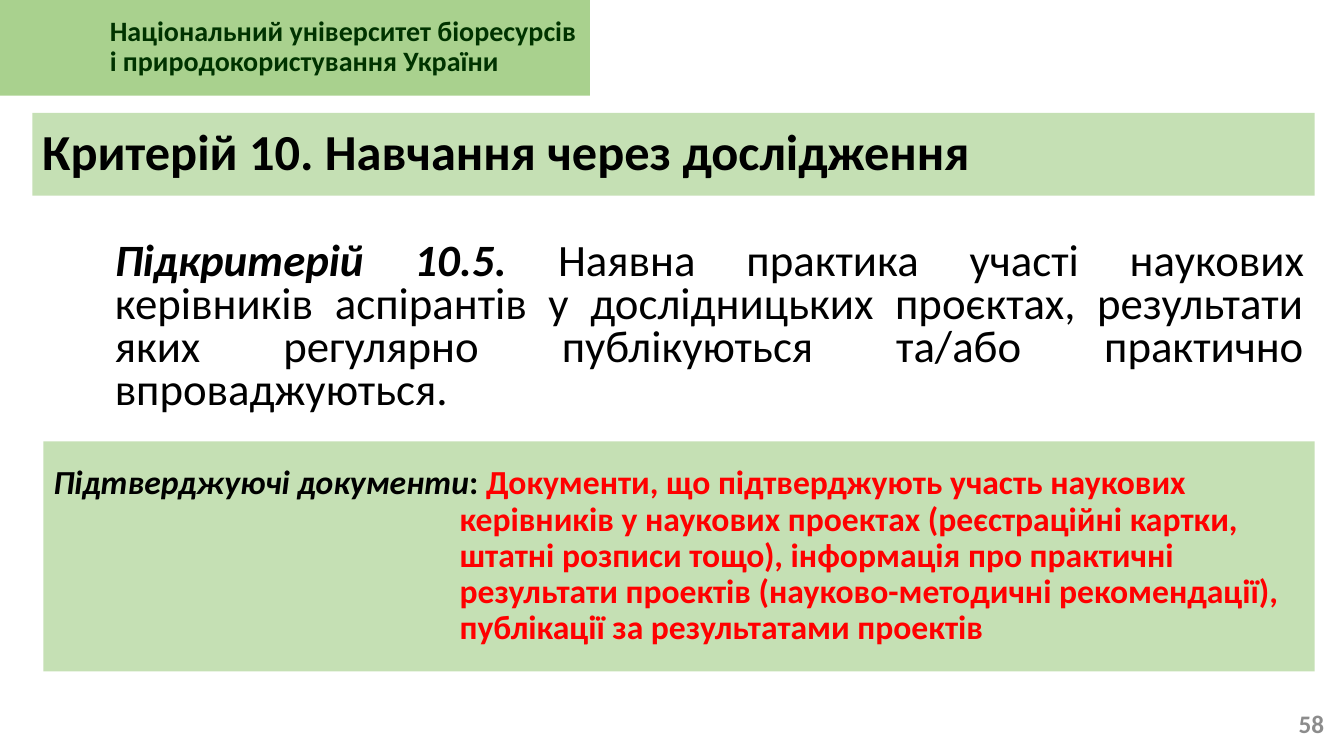
from dataclasses import dataclass
from typing import Optional

import pptx
import pptx.dml.color
import pptx.enum.shapes
import pptx.enum.text
import pptx.presentation
import pptx.slide
import pptx.util

RGBColor = pptx.dml.color.RGBColor
Inches = pptx.util.Inches
Align = pptx.enum.text.PP_ALIGN

MID_GREEN = RGBColor(0xA9, 0xD1, 0x8E)
PALE_GREEN = RGBColor(0xC5, 0xE0, 0xB4)
DARK_GREEN = RGBColor(0x00, 0x33, 0x00)
BLACK = RGBColor(0x00, 0x00, 0x00)
GRAY = RGBColor(0x8C, 0x8C, 0x8C)
RED = RGBColor(0xFF, 0x00, 0x00)


@dataclass(frozen=True)
class Run:
    text: str
    color: RGBColor = BLACK
    bold: bool = True
    italic: bool = False


@dataclass(frozen=True)
class Panel:
    left: float
    top: float
    width: float
    height: float
    size: int
    runs: tuple[Run, ...]
    fill: Optional[RGBColor] = None
    align: Align = Align.LEFT
    spacing: float = 0.9
    margin: float = 0
    indent: float = 0


PANELS = (
    Panel(0, -0.01, 5.85, 0.96, 20,
          (Run("Національний університет біоресурсів і природокористування України",
               DARK_GREEN),),
          fill=MID_GREEN, margin=0.99),
    Panel(0.32, 1.12, 12.72, 0.82, 36,
          (Run("Критерій 10. Навчання через дослідження"),),
          fill=PALE_GREEN),
    Panel(12.74, 6.98, 0.49, 0.4, 18, (Run("58", GRAY),),
          align=Align.RIGHT, spacing=1.0),
    Panel(1.04, 2.13, 12, 2.25, 32,
          (Run("Підкритерій 10.5. ", italic=True),
           Run("Наявна практика участі наукових керівників аспірантів у "
               "дослідницьких проєктах, результати яких регулярно публікуються "
               "та/або практично впроваджуються.", bold=False)),
          align=Align.JUSTIFY, spacing=0.8),
    Panel(0.43, 4.38, 12.61, 2.28, 24,
          (Run("Підтверджуючі документи", italic=True),
           Run(": "),
           Run("Документи, що підтверджують участь наукових керівників у "
               "наукових проектах (реєстраційні картки, штатні розписи тощо), "
               "інформація про практичні результати проектів "
               "(науково-методичні рекомендації), публікації за результатами "
               "проектів", RED)),
          fill=PALE_GREEN, margin=4.03, indent=-4.03),
)


def draw(slide: pptx.slide.Slide, panel: Panel) -> None:
    place = [Inches(n) for n in (panel.left, panel.top, panel.width, panel.height)]
    if panel.fill is None:
        shape = slide.shapes.add_textbox(*place)
    else:
        shape = slide.shapes.add_shape(
            pptx.enum.shapes.MSO_SHAPE.RECTANGLE, *place)
        shape.shadow.inherit = False
        shape.fill.solid()
        shape.fill.fore_color.rgb = panel.fill
        shape.line.fill.background()

    frame = shape.text_frame
    frame.word_wrap = True
    frame.vertical_anchor = pptx.enum.text.MSO_ANCHOR.MIDDLE
    para = frame.paragraphs[0]
    para.alignment = panel.align
    para.line_spacing = panel.spacing
    if panel.margin:
        props = para._p.get_or_add_pPr()
        props.set("marL", str(Inches(panel.margin)))
        props.set("indent", str(Inches(panel.indent)))

    for part in panel.runs:
        run = para.add_run()
        run.text = part.text
        font = run.font
        font.name = "Calibri"
        font.size = pptx.util.Pt(panel.size)
        font.bold = part.bold
        font.italic = part.italic
        font.color.rgb = part.color


def main() -> None:
    deck = pptx.Presentation()
    deck.slide_width = Inches(13.33)
    deck.slide_height = Inches(7.5)
    slide = deck.slides.add_slide(deck.slide_layouts[6])
    for panel in PANELS:
        draw(slide, panel)
    deck.save("out.pptx")


if __name__ == "__main__":
    main()
